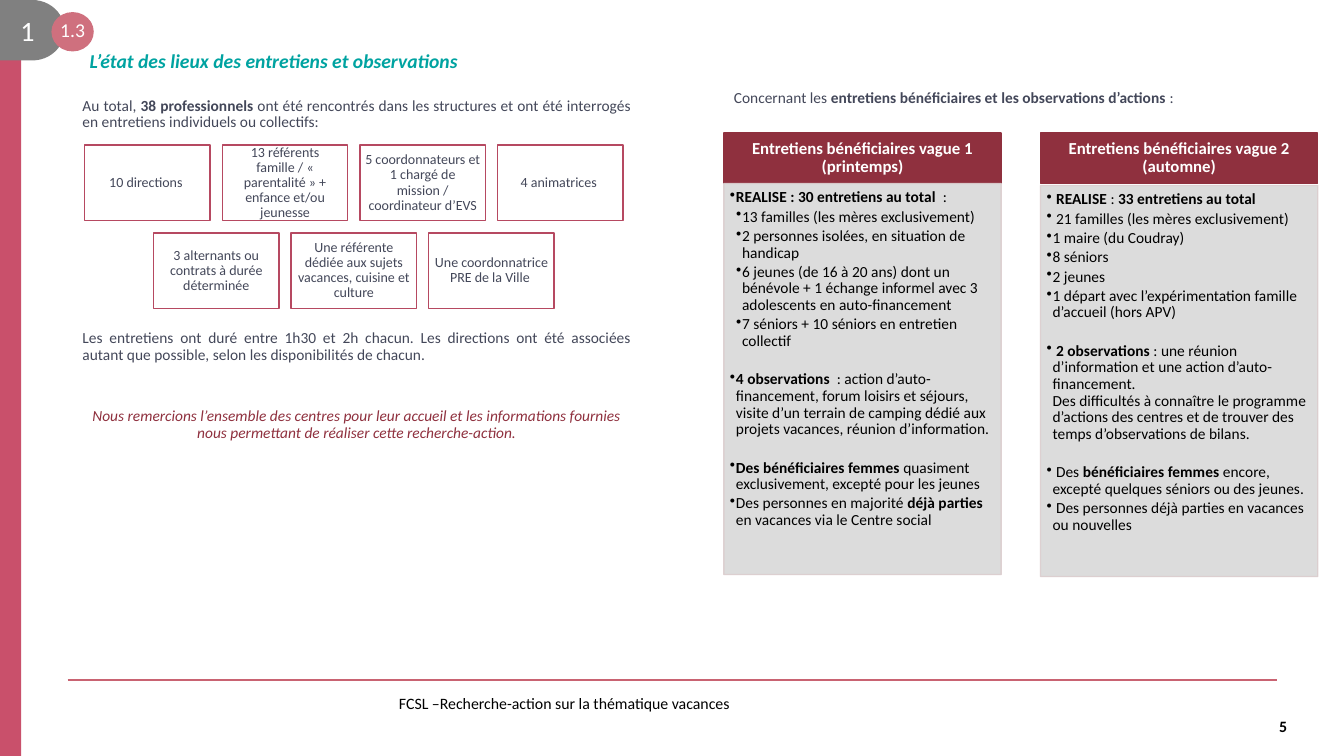
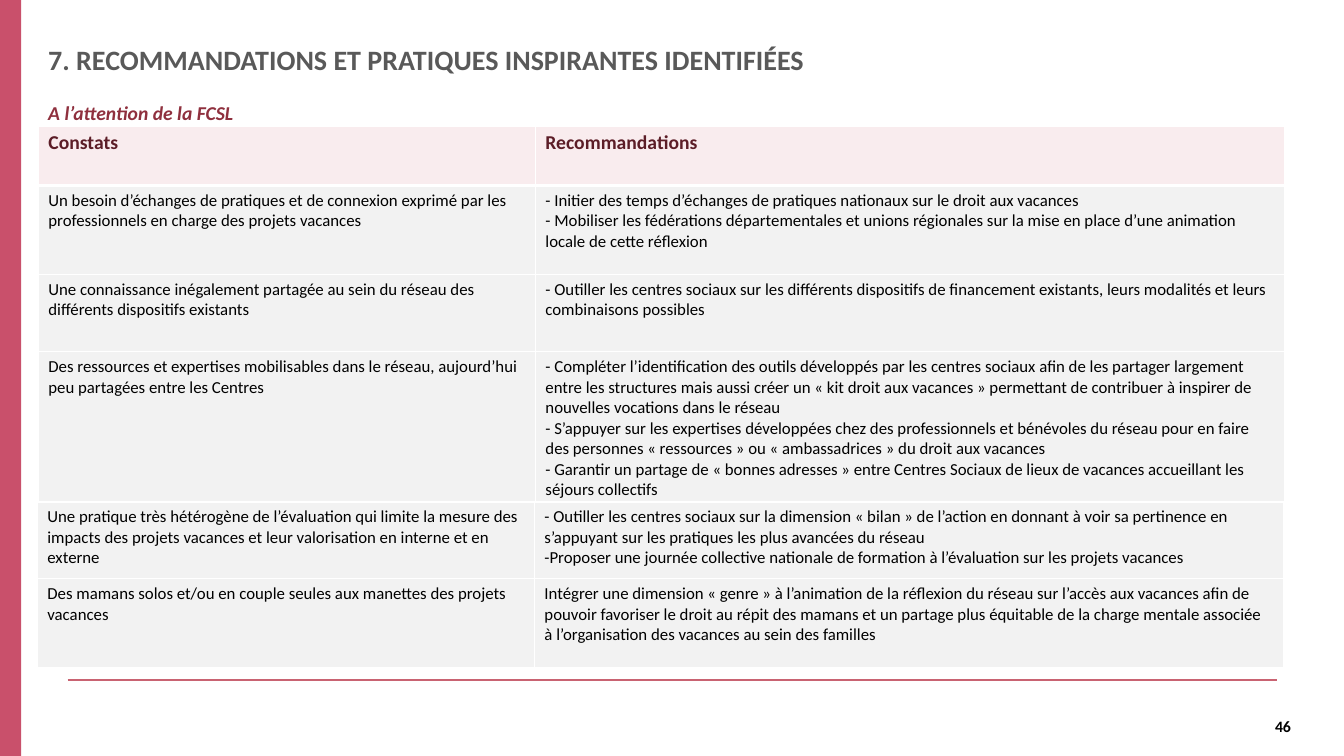
from pptx import Presentation
from pptx.dml.color import RGBColor
from pptx.enum.shapes import MSO_CONNECTOR, MSO_SHAPE
from pptx.enum.text import MSO_ANCHOR, PP_ALIGN
from pptx.oxml.ns import qn
from pptx.util import Inches, Pt
from lxml.etree import SubElement

FONT = "Calibri"
W, H = 13.33, 7.5
C = {
    "band": "C9506B", "rule": "C96372", "teal": "00A3A1", "ink": "434759",
    "wine": "8F303E", "dark_wine": "5C1D27", "card_line": "B64961",
    "badge": "808080", "sub_badge": "CF707E", "title": "595959",
    "panel": "D9D9D9", "panel_line": "DBCDCE", "head": "F9ECEE",
    "row": "F2F2F2", "white": "FFFFFF", "black": "000000",
}
LEFT, CENTER, JUSTIFY = PP_ALIGN.LEFT, PP_ALIGN.CENTER, PP_ALIGN.JUSTIFY
TOP, MIDDLE, BOTTOM = MSO_ANCHOR.TOP, MSO_ANCHOR.MIDDLE, MSO_ANCHOR.BOTTOM


def rgb(name):
    return RGBColor.from_string(C[name])


def write_par(p, text, size, color, bold=False, italic=False, align=LEFT, spacing=0.9):
    """Write text in p; ** switches bold on and off, a newline breaks the line."""
    p.alignment = align
    p.line_spacing = spacing
    for i, part in enumerate(text.split("**")):
        for j, line in enumerate(part.split("\n")):
            if j:
                p.add_line_break()
            if not line:
                continue
            r = p.add_run()
            r.text = line
            f = r.font
            f.name, f.size, f.color.rgb = FONT, Pt(size), rgb(color)
            f.bold, f.italic = bold or i % 2 == 1, italic


def paragraphs(tf, count):
    return [tf.paragraphs[0]] + [tf.add_paragraph() for _ in range(count - 1)]


def set_frame(tf, anchor=TOP, insets=(0.1, 0.05, 0.1, 0.05)):
    tf.word_wrap = True
    tf.vertical_anchor = anchor
    tf.margin_left, tf.margin_top, tf.margin_right, tf.margin_bottom = map(Inches, insets)


def add_text(s, box, text, size, color, anchor=TOP, **style):
    tf = s.shapes.add_textbox(*map(Inches, box)).text_frame
    set_frame(tf, anchor)
    write_par(tf.paragraphs[0], text, size, color, **style)


def add_box(s, box, fill, line=None, kind=MSO_SHAPE.RECTANGLE):
    sp = s.shapes.add_shape(kind, *map(Inches, box))
    sp.shadow.inherit = False
    sp.fill.solid()
    sp.fill.fore_color.rgb = rgb(fill)
    if line:
        sp.line.color.rgb = rgb(line)
        sp.line.width = Pt(1)
    else:
        sp.line.fill.background()
    return sp


def add_label(s, box, text, size, color, fill, line=None, kind=MSO_SHAPE.RECTANGLE,
              insets=(0.04,) * 4, **style):
    """Filled shape with one centred paragraph."""
    sp = add_box(s, box, fill, line, kind)
    set_frame(sp.text_frame, MIDDLE, insets)
    write_par(sp.text_frame.paragraphs[0], text, size, color, align=CENTER, **style)
    return sp


def new_slide(prs, number):
    """Blank slide with the side band, bottom rule and page number."""
    s = prs.slides.add_slide(prs.slide_layouts[6])
    rule = s.shapes.add_connector(MSO_CONNECTOR.STRAIGHT, *map(Inches, (0.67, 6.75, 12.67, 6.75)))
    rule.line.color.rgb = rgb("rule")
    rule.line.width = Pt(1.5)
    SubElement(rule._element.spPr, qn("a:effectLst"))
    add_box(s, (0, 0, 0.21, H), "band")
    add_text(s, (12.12, 6.95, 1.21, 0.4), number, 11.3, "black", BOTTOM,
             bold=True, align=CENTER, spacing=1)
    return s


def section_badge(s, x, y, chapter, section):
    add_label(s, (x, y, 0.64, 0.6), chapter, 20, "white", "badge",
              kind=MSO_SHAPE.FLOWCHART_DELAY, spacing=1)
    sp = add_label(s, (x + 0.51, y + 0.12, 0.42, 0.39), section, 14, "white", "sub_badge",
                   kind=MSO_SHAPE.FLOWCHART_CONNECTOR, insets=(0, 0, 0, 0.04), spacing=1)
    sp.text_frame.word_wrap = False


def card_rows(s, box, rows):
    """Rows of equal cards, each row centred in the box."""
    x, y, w, h = box
    gap = 0.12
    cols = max(map(len, rows))
    card_w = (w - gap * (cols - 1)) / cols
    card_h = (h - gap * (len(rows) - 1)) / len(rows)
    for i, row in enumerate(rows):
        left = x + (cols - len(row)) * (card_w + gap) / 2
        for j, text in enumerate(row):
            add_label(s, (left + j * (card_w + gap), y + i * (card_h + gap), card_w, card_h),
                      text, 10, "ink", "white", "card_line")


def set_bullet(p, level):
    pPr = p._p.get_or_add_pPr()
    pPr.set("marL", str(Inches(0.06 * level)))
    pPr.set("indent", str(-Inches(0.06)))
    SubElement(pPr, qn("a:buChar")).set("char", "•")


def interview_panel(s, box, head_h, body_dy, heading, items):
    """Heading bar over a list; items are (level, gap before, text)."""
    x, y, w, h = box
    add_label(s, (x, y, w, head_h), heading, 12, "white", "wine", "wine",
              insets=(0.09, 0.05, 0.09, 0.05), bold=True)
    body = add_box(s, (x, y + body_dy, w, h - head_h), "panel", "panel_line")
    for color in body._element.spPr.iter(qn("a:srgbClr")):
        SubElement(color, qn("a:alpha")).set("val", "90000")
    tf = body.text_frame
    set_frame(tf, TOP, (0.06, 0.06, 0.09, 0.1))
    for p, (level, gap, text) in zip(paragraphs(tf, len(items)), items):
        write_par(p, text, 11, "black")
        p.space_before, p.space_after = Pt(gap), Pt(1.9)
        set_bullet(p, level)


def set_borders(cell, bottom):
    tcPr = cell._tc.get_or_add_tcPr()
    for i, (side, width) in enumerate((("L", 1), ("R", 1), ("T", 1), ("B", bottom))):
        ln = tcPr.makeelement(qn("a:ln" + side), {"w": str(Pt(width))})
        fill = SubElement(ln, qn("a:solidFill"))
        SubElement(fill, qn("a:srgbClr")).set("val", C["white"])
        tcPr.insert(i, ln)


def findings_table(s, x, y, col_widths, row_heights, rows, header=False, bottom=1):
    shape = s.shapes.add_table(len(rows), len(col_widths), Inches(x), Inches(y),
                               Inches(sum(col_widths)), Inches(sum(row_heights)))
    table = shape.table
    table.first_row, table.horz_banding = header, False
    for col, width in zip(table.columns, col_widths):
        col.width = Inches(width)
    for i, (row, height) in enumerate(zip(rows, row_heights)):
        table.rows[i].height = Inches(height)
        is_head = header and i == 0
        size, color, fill = (14, "dark_wine", "head") if is_head else (12, "black", "row")
        for j, text in enumerate(row):
            cell = table.cell(i, j)
            cell.fill.solid()
            cell.fill.fore_color.rgb = rgb(fill)
            set_borders(cell, 3 if is_head else bottom)
            lines = text.split("\n")
            for p, line in zip(paragraphs(cell.text_frame, len(lines)), lines):
                write_par(p, line, size, color, bold=is_head, spacing=1)


CARDS = [
    ["10 directions ", "13 référents famille / « parentalité » + enfance et/ou jeunesse",
     "5 coordonnateurs et 1 chargé de mission / coordinateur d’EVS", "4 animatrices "],
    ["3 alternants ou contrats à durée déterminée",
     "Une référente dédiée aux sujets vacances, cuisine et culture",
     "Une coordonnatrice PRE de la Ville "],
]
GAP = 13.6
SPRING = [
    (1, 0, "**REALISE : 30 entretiens au total ** :"),
    (2, 0, "13 familles (les mères exclusivement)"),
    (2, 0, "2 personnes isolées, en situation de handicap"),
    (2, 0, "6 jeunes (de 16 à 20 ans) dont un bénévole + 1 échange informel avec 3 "
           "adolescents en auto-financement"),
    (2, 0, "7 séniors + 10 séniors en entretien collectif"),
    (1, GAP, "**4 observations  **: action d’auto-financement, forum loisirs et séjours, visite "
             "d’un terrain de camping dédié aux projets vacances, réunion d’information."),
    (1, GAP, "**Des bénéficiaires femmes **quasiment exclusivement, excepté pour les jeunes"),
    (1, 0, "Des personnes en majorité **déjà parties **en vacances via le Centre social"),
]
AUTUMN = [
    (1, 0, " **REALISE** : **33 entretiens au total**"),
    (1, 0, " 21 familles (les mères exclusivement)"),
    (1, 0, "1 maire (du Coudray)"),
    (1, 0, "8 séniors"),
    (1, 0, "2 jeunes"),
    (1, 0, "1 départ avec l’expérimentation famille d’accueil (hors APV)"),
    (1, GAP, "** 2 observations **: une réunion d’information et une action d’auto-financement.\n"
             "Des difficultés à connaître le programme d’actions des centres et de trouver des "
             "temps d’observations de bilans."),
    (1, GAP, " Des **bénéficiaires femmes **encore, excepté quelques séniors ou des jeunes."),
    (1, 0, " Des personnes déjà parties en vacances ou nouvelles"),
]
FINDINGS = [
    ("Constats", "Recommandations"),
    ("Un besoin d’échanges de pratiques et de connexion exprimé par les professionnels en charge "
     "des projets vacances",
     "- Initier des temps d’échanges de pratiques nationaux sur le droit aux vacances\n"
     "- Mobiliser les fédérations départementales et unions régionales sur la mise en place "
     "d’une animation locale de cette réflexion"),
    ("Une connaissance inégalement partagée au sein du réseau des différents dispositifs existants",
     "- Outiller les centres sociaux sur les différents dispositifs de financement existants, "
     "leurs modalités et leurs combinaisons possibles"),
    ("Des ressources et expertises mobilisables dans le réseau, aujourd’hui peu partagées entre "
     "les Centres",
     "- Compléter l’identification des outils développés par les centres sociaux afin de les "
     "partager largement entre les structures mais aussi créer un « kit droit aux vacances » "
     "permettant de contribuer à inspirer de nouvelles vocations dans le réseau\n"
     "- S’appuyer sur les expertises développées chez des professionnels et bénévoles du réseau "
     "pour en faire des personnes « ressources » ou « ambassadrices » du droit aux vacances\n"
     "- Garantir un partage de « bonnes adresses » entre Centres Sociaux de lieux de vacances "
     "accueillant les séjours collectifs"),
]
EVALUATION = [
    ("Une pratique très hétérogène de l’évaluation qui limite la mesure des impacts des projets "
     "vacances et leur valorisation en interne et en externe",
     "- Outiller les centres sociaux sur la dimension « bilan » de l’action en donnant à voir sa "
     "pertinence en s’appuyant sur les pratiques les plus avancées du réseau\n"
     "-Proposer une journée collective nationale de formation à l’évaluation sur les projets "
     "vacances"),
]
GENDER = [
    ("Des mamans solos et/ou en couple seules aux manettes des projets vacances",
     "Intégrer une dimension « genre » à l’animation de la réflexion du réseau sur l’accès aux "
     "vacances afin de pouvoir favoriser le droit au répit des mamans et un partage plus "
     "équitable de la charge mentale associée à l’organisation des vacances au sein des familles"),
]


def interviews_slide(prs):
    s = new_slide(prs, "5")
    add_text(s, (0.79, 0.46, 5.39, 0.4), "L’état des lieux des entretiens et observations",
             14, "teal", bold=True, italic=True)
    add_text(s, (0.67, 6.81, 9.85, 0.31), "FCSL –Recherche-action sur la thématique vacances",
             11.3, "black", BOTTOM, align=CENTER, spacing=1)
    x, w = 0.72, 5.64
    add_text(s, (x, 0.92, w, 0.45),
             "Au total, **38 professionnels **ont été rencontrés dans les structures et ont été "
             "interrogés en entretiens individuels ou collectifs:", 11, "ink", align=JUSTIFY)
    add_text(s, (x, 3.23, w, 0.45),
             "Les entretiens ont duré entre 1h30 et 2h chacun. Les directions ont été associées "
             "autant que possible, selon les disponibilités de chacun.", 11, "ink", align=JUSTIFY)
    add_text(s, (x, 4, w, 0.45),
             "Nous remercions l’ensemble des centres pour leur accueil et les informations "
             "fournies nous permettant de réaliser cette recherche-action.",
             11, "wine", italic=True, align=CENTER)
    section_badge(s, 0, 0, "1", "1.3")
    card_rows(s, (0.84, 1.44, 5.34, 1.62), CARDS)
    add_text(s, (7.18, 0.85, 6, 0.27),
             "Concernant les **entretiens bénéficiaires et les observations d’actions **: ",
             11, "ink", align=JUSTIFY)
    interview_panel(s, (7.18, 1.32, 2.75, 4.38), 0.5, 0.5,
                    "Entretiens bénéficiaires vague 1 (printemps)", SPRING)
    interview_panel(s, (10.32, 1.32, 2.75, 4.38), 0.5, 0.52,
                    "Entretiens bénéficiaires vague 2 (automne)", AUTUMN)


def recommendations_slide(prs):
    s = new_slide(prs, "46")
    add_text(s, (0.38, 0.41, 11.5, 0.58),
             "7. RECOMMANDATIONS ET PRATIQUES INSPIRANTES IDENTIFIÉES", 20, "title", bold=True)
    add_text(s, (0.38, 0.98, 11.5, 0.3), "A l’attention de la FCSL", 14, "wine",
             bold=True, italic=True)
    cols = (4.93, 7.43)
    findings_table(s, 0.38, 1.25, cols, (0.59, 0.88, 0.77, 1.5), FINDINGS, header=True)
    findings_table(s, 0.37, 4.98, cols, (0.81,), EVALUATION, bottom=3)
    findings_table(s, 0.37, 5.74, cols, (0.9,), GENDER, bottom=3)


def main():
    prs = Presentation()
    prs.slide_width, prs.slide_height = Inches(W), Inches(H)
    interviews_slide(prs)
    recommendations_slide(prs)
    prs.save("out.pptx")


if __name__ == "__main__":
    main()
